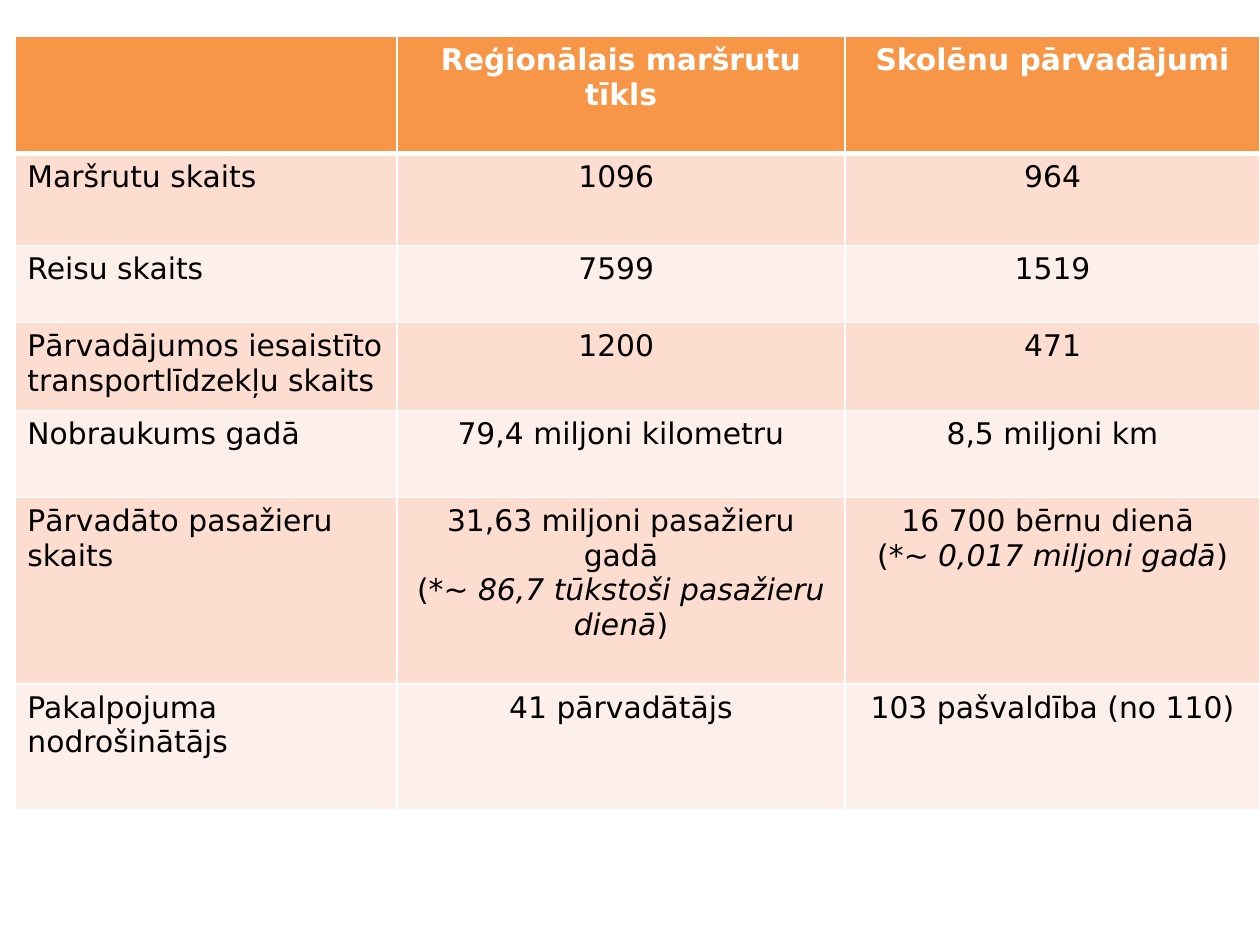
from lxml import etree
from pptx import Presentation
from pptx.dml.color import RGBColor
from pptx.enum.text import PP_ALIGN
from pptx.oxml.ns import qn
from pptx.util import Cm, Pt

LEFT, CENTER = PP_ALIGN.LEFT, PP_ALIGN.CENTER

FONT = "DejaVu Sans"
WHITE, BLACK = "FFFFFF", "000000"
HEADER_FILL = "F79646"
BAND_FILLS = ["FDEFE9", "FCDDCF"]
THIN, THICK = 1, 3

TABLE_LEFT, TABLE_TOP = 0.3, 0.74
COLUMN_WIDTHS = [7.7, 9.04, 8.36]
ROW_HEIGHTS = [2.36, 1.85, 1.55, 1.78, 1.75, 3.76, 2.54]

ROWS = [
    ["", "Reģionālais maršrutu tīkls", "Skolēnu pārvadājumi"],
    ["Maršrutu skaits", "1096 ", "964"],
    ["Reisu skaits", "7599 ", "1519"],
    ["Pārvadājumos iesaistīto transportlīdzekļu skaits", "1200 ", "471"],
    ["Nobraukums gadā", "79,4 miljoni kilometru", "8,5 miljoni km"],
    ["Pārvadāto pasažieru skaits", "31,63 miljoni pasažieru gadā", "16 700 bērnu dienā "],
    ["Pakalpojuma nodrošinātājs", "41 pārvadātājs", "103 pašvaldība (no 110)"],
]
ESTIMATES = {
    (5, 1): "~ 86,7 tūkstoši pasažieru dienā",
    (5, 2): "~ 0,017 miljoni gadā",
}


def rgb(color):
    return RGBColor.from_string(color)


def add_text(paragraph, text, is_header, italic=False):
    run = paragraph.add_run()
    run.text = text
    run.font.color.rgb = rgb(WHITE if is_header else BLACK)
    formats = {"name": FONT, "size": Pt(17), "bold": is_header, "italic": italic}
    for attribute, value in formats.items():
        setattr(run.font, attribute, value)


def set_borders(cell, widths):
    properties = cell._tc.get_or_add_tcPr()
    for position, (side, width) in enumerate(widths.items()):
        line = etree.Element(qn(f"a:ln{side}"), w=str(Pt(width)))
        fill = etree.SubElement(line, qn("a:solidFill"))
        etree.SubElement(fill, qn("a:srgbClr"), val=WHITE)
        properties.insert(position, line)


def fill_cell(cell, row, column):
    is_header = row == 0
    cell.fill.solid()
    cell.fill.fore_color.rgb = rgb(HEADER_FILL if is_header else BAND_FILLS[row % 2])
    set_borders(cell, {
        "L": THIN,
        "R": THIN,
        "T": THICK if row == 1 else THIN,
        "B": THICK if is_header else THIN,
    })
    alignment = CENTER if column else LEFT
    paragraph = cell.text_frame.paragraphs[0]
    paragraph.alignment = alignment
    if ROWS[row][column]:
        add_text(paragraph, ROWS[row][column], is_header)
    if (row, column) in ESTIMATES:
        note = cell.text_frame.add_paragraph()
        note.alignment = alignment
        add_text(note, "(*", is_header)
        add_text(note, ESTIMATES[row, column], is_header, italic=True)
        add_text(note, ")", is_header)


def main():
    presentation = Presentation()
    presentation.slide_width, presentation.slide_height = Cm(25.4), Cm(19.05)
    slide = presentation.slides.add_slide(presentation.slide_layouts[6])
    comparison = slide.shapes.add_table(
        len(ROWS), len(COLUMN_WIDTHS), Cm(TABLE_LEFT), Cm(TABLE_TOP),
        Cm(sum(COLUMN_WIDTHS)), Cm(sum(ROW_HEIGHTS)),
    ).table
    for column, width in enumerate(COLUMN_WIDTHS):
        comparison.columns[column].width = Cm(width)
    for row, height in enumerate(ROW_HEIGHTS):
        comparison.rows[row].height = Cm(height)
        for column in range(len(COLUMN_WIDTHS)):
            fill_cell(comparison.cell(row, column), row, column)
    presentation.save("out.pptx")


if __name__ == "__main__":
    main()
